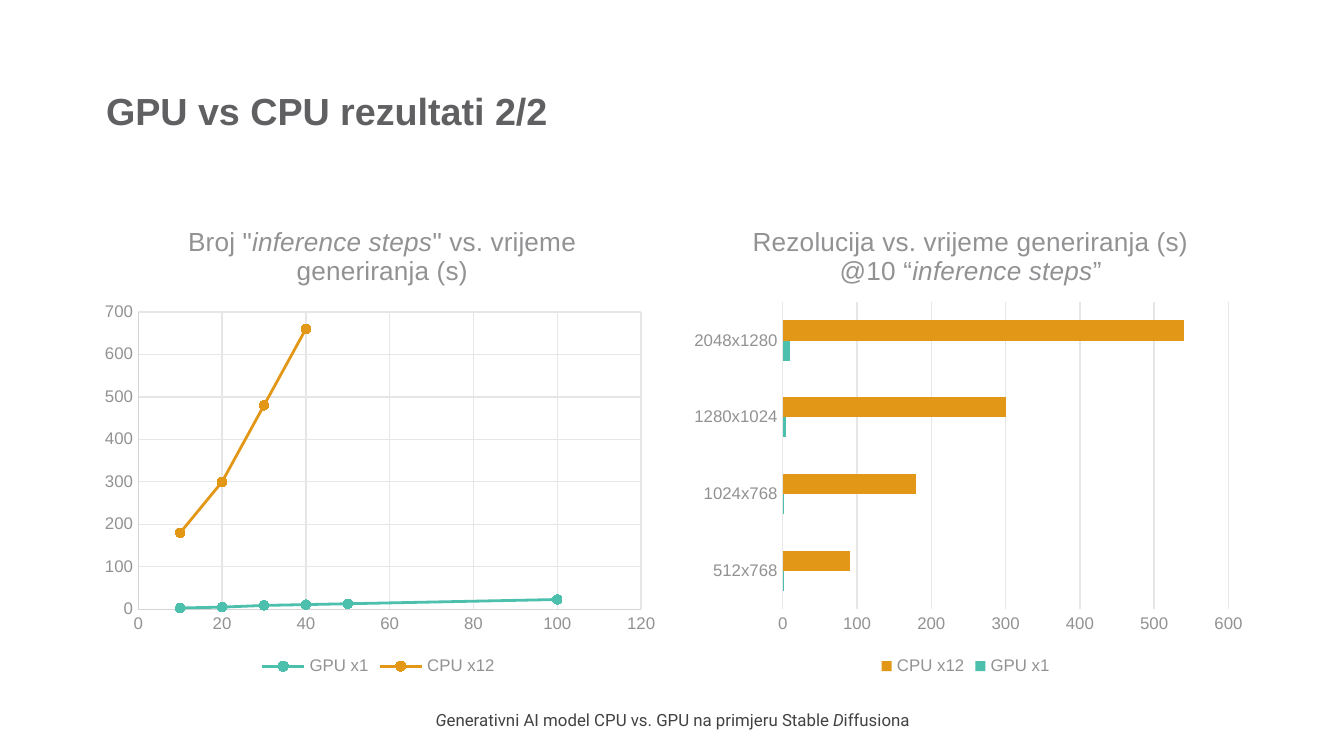
"""Builds a slide that compares GPU and CPU generation times in two charts."""
from lxml.etree import SubElement
from pptx import Presentation
from pptx.chart.data import CategoryChartData as CatData, XyChartData as XyData
from pptx.dml.color import RGBColor
from pptx.enum.chart import XL_CHART_TYPE as Kind, XL_LEGEND_POSITION as Place
from pptx.enum.chart import XL_MARKER_STYLE as Mark, XL_TICK_MARK as Tick
from pptx.enum.text import MSO_ANCHOR as Anchor, PP_ALIGN as Align
from pptx.oxml.ns import qn
from pptx.util import Cm, Pt

TEAL, GOLD, GREY, PALE = "4CC0AD", "E39717", "929294", "E6E6E6"


def tint(code):
    return RGBColor.from_string(code)


def write(para, text, size, color, face="Arial", bold=False, align=Align.CENTER):
    """Add text to a paragraph; parts between asterisks are italic."""
    para.alignment = align
    for i, part in enumerate(text.split("*")):
        if part:
            run = para.add_run()
            run.text = part
            font = run.font
            font.size, font.name, font.bold = Pt(size), face, bold
            font.italic = i % 2 == 1
            font.color.rgb = tint(color)


deck = Presentation()
deck.slide_width, deck.slide_height = Cm(25.4), Cm(14.29)
slide = deck.slides.add_slide(deck.slide_layouts[5])

title = slide.shapes.title
title.left, title.top, title.width, title.height = Cm(1.75), Cm(0.76), Cm(21.9), Cm(2.77)
title.text_frame.vertical_anchor = Anchor.MIDDLE
head = title.text_frame.paragraphs[0]
head.line_spacing = 0.9
write(head, "GPU vs CPU rezultati 2/2", 20.2, "606062", bold=True, align=Align.LEFT)

foot = slide.shapes.add_textbox(Cm(5.74), Cm(13.23), Cm(13.94), Cm(0.76)).text_frame
foot.word_wrap = True
foot.vertical_anchor = Anchor.MIDDLE
write(foot.paragraphs[0],
      "*G*enerativni AI model CPU vs. GPU na primjeru Stable *D*iffusiona",
      9, "424243", face="Roboto")

steps = [10, 20, 30, 40, 50, 100]
times = XyData()
for name, vals in (("GPU x1", [3, 5, 9, 11, 13, 23]), ("CPU x12", [180, 300, 480, 660])):
    line = times.add_series(name)
    for x, y in zip(steps, vals):
        line.add_data_point(x, y)

sizes = CatData()
sizes.categories = ["512x768", "1024x768", "1280x1024", "2048x1280"]
sizes.add_series("GPU x1", [1, 2, 4, 10])
sizes.add_series("CPU x12", [90, 180, 300, 540])

plans = [
    (Kind.XY_SCATTER_LINES, times, 1.75, 'Broj "*inference steps*" vs. vrijeme generiranja (s)',
     (0.08, 0.23, 0.88, 0.62), (0.16, 0.04)),
    (Kind.BAR_CLUSTERED, sizes, 12.85,
     "Rezolucija vs. vrijeme generiranja (s) @10 “*inference steps*”",
     (0.18, 0.21, 0.78, 0.64), (0.12, 0.04)),
]
for kind, data, left, text, area, spot in plans:
    chart = slide.shapes.add_chart(kind, Cm(left), Cm(3.81), Cm(10.8), Cm(9.07), data).chart
    chart.font.size, chart.font.name = Pt(10), "Arial"
    chart.font.color.rgb = tint("58585A")
    chart.has_title = True
    write(chart.chart_title.text_frame.paragraphs[0], text, 14, GREY)
    chart.chart_title.include_in_layout = False
    chart.has_legend = True
    chart.legend.position = Place.BOTTOM
    chart.legend.include_in_layout = False

    scatter = kind == Kind.XY_SCATTER_LINES
    axes = chart.category_axis, chart.value_axis
    for axis in axes:
        axis.major_tick_mark = axis.minor_tick_mark = Tick.NONE
        axis.has_major_gridlines = scatter or axis is axes[1]
        if axis.has_major_gridlines:
            grid = axis.major_gridlines.format.line
            grid.width, grid.color.rgb = Pt(0.75), tint(PALE)
        edge = axis.format.line
        if scatter or axis is axes[0]:
            edge.width, edge.color.rgb = Pt(0.75), tint("D5D5D6" if scatter else PALE)
        else:
            edge.fill.background()
    for font in (axes[0].tick_labels.font, axes[1].tick_labels.font, chart.legend.font):
        font.size, font.name = Pt(9), "Arial"
        font.color.rgb = tint(GREY)
    axes[1].minimum_scale, axes[1].maximum_scale = 0, 700 if scatter else 600
    axes[1].major_unit = 100
    if scatter:
        axes[0].minimum_scale, axes[0].maximum_scale, axes[0].major_unit = 0, 120, 20

    plot = chart.plots[0]
    plot.vary_by_categories = False
    if not scatter:
        plot.gap_width, plot.overlap = 182, 0
    for item, color in zip(plot.series, (TEAL, GOLD)):
        if scatter:
            item.smooth = False
            item.format.line.width, item.format.line.color.rgb = Pt(1.5), tint(color)
            item.marker.style, item.marker.size = Mark.CIRCLE, 5
            dot = item.marker.format
            dot.fill.solid()
            dot.fill.fore_color.rgb = dot.line.color.rgb = tint(color)
        else:
            item.format.fill.solid()
            item.format.fill.fore_color.rgb = tint(color)

    root = chart.element.chart
    for node, nums in ((root.plotArea, area), (root.find(qn("c:title")), spot)):
        for old in node.findall(qn("c:layout")):
            node.remove(old)
        frame = SubElement(node, qn("c:layout"))
        node.insert(0 if node is root.plotArea else 1, frame)
        box = SubElement(frame, qn("c:manualLayout"))
        if node is root.plotArea:
            SubElement(box, qn("c:layoutTarget")).set("val", "inner")
        for key in ("xMode", "yMode"):
            SubElement(box, qn("c:" + key)).set("val", "edge")
        for key, num in zip("xywh", nums):
            SubElement(box, qn("c:" + key)).set("val", str(num))

deck.save("out.pptx")
